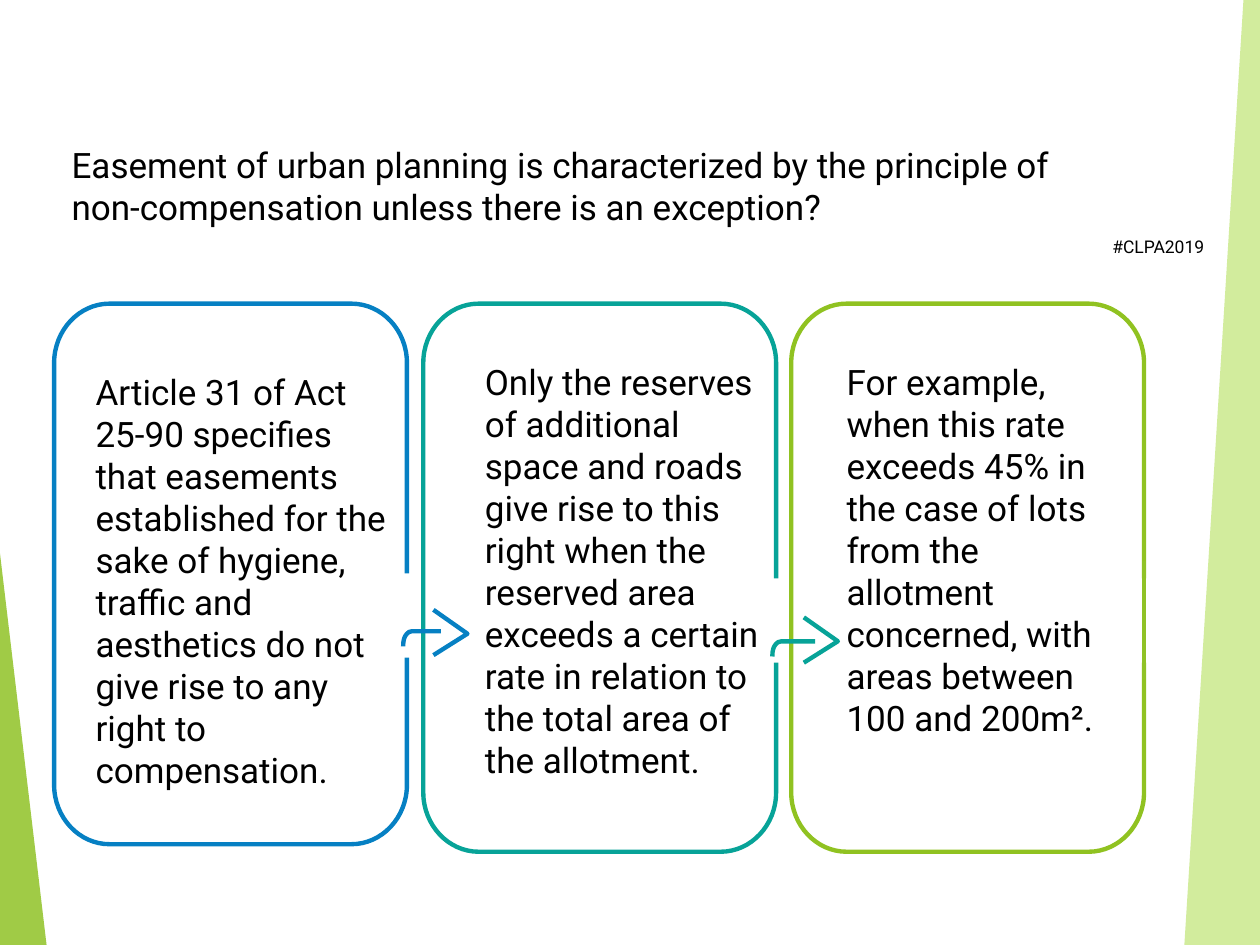
import pptx
import pptx.dml.color
import pptx.enum.shapes
import pptx.enum.text
import pptx.oxml.ns
import pptx.util
from lxml import etree
from pptx.oxml.ns import qn
from pptx.util import Inches

COLORS = {
    "text": "000000",
    "blue": "0680C3",
    "teal": "07A398",
    "green": "90C221",
    "edge": "90C226",
    "pale": "C0E474",
}
FONT = "Roboto"
CARD_TOP, CARD_WIDTH = 2.41, 2.8
CORNER_X, CORNER_Y = 0.44, 0.47
ROUNDNESS = 0.55


def rgb(name):
    return pptx.dml.color.RGBColor.from_string(COLORS[name])


def corner(start, bend, end):
    """Curve as two control points and an end point, rounding the bend."""
    controls = [tuple(p + (b - p) * ROUNDNESS for p, b in zip(point, bend))
                for point in (start, end)]
    return [*controls, end]


def write_text(frame, text, size=20, color="text", font=FONT):
    run = frame.paragraphs[0].add_run()
    run.text = text
    run.font.size = pptx.util.Pt(size)
    run.font.name = font
    run.font.color.rgb = rgb(color)


class SlideBuilder:
    def __init__(self, slide, line_width=2.5):
        self.slide = slide
        self.line_width = line_width

    def fill(self, shape, color, opacity):
        shape.shadow.inherit = False
        shape.line.fill.background()
        shape.fill.solid()
        shape.fill.fore_color.rgb = rgb(color)
        tint = shape._element.spPr.find(".//" + qn("a:srgbClr"))
        etree.SubElement(tint, qn("a:alpha"), val=str(opacity * 1000))

    def freeform(self, start, segments, close=False):
        """Draw segments of one point as lines and of three points as curves."""
        points = [(Inches(x), Inches(y)) for segment in segments for x, y in segment]
        builder = self.slide.shapes.build_freeform(Inches(start[0]), Inches(start[1]))
        builder.add_line_segments(points, close=close)
        shape = builder.convert_to_shape()
        steps = iter(list(shape._element.iter(qn("a:lnTo"))))
        for segment in segments:
            first, *others = [next(steps) for _ in segment]
            if others:
                first.addprevious(curve := etree.Element(qn("a:cubicBezTo")))
                for step in (first, *others):
                    curve.append(step[0])
                    step.getparent().remove(step)
        return shape

    def outline(self, start, segments, color):
        shape = self.freeform(start, segments)
        shape.shadow.inherit = False
        shape.fill.background()
        shape.line.color.rgb = rgb(color)
        shape.line.width = pptx.util.Pt(self.line_width)

    def polygon(self, points, color, opacity):
        start, *others = points
        shape = self.freeform(start, [[point] for point in others], close=True)
        self.fill(shape, color, opacity)

    def triangle(self, left, top, width, height, color, opacity):
        shape = self.slide.shapes.add_shape(
            pptx.enum.shapes.MSO_SHAPE.ISOSCELES_TRIANGLE,
            Inches(left), Inches(top), Inches(width), Inches(height))
        shape.adjustments[0] = 0
        self.fill(shape, color, opacity)

    def line(self, start, end, color, width):
        connector = self.slide.shapes.add_connector(
            pptx.enum.shapes.MSO_CONNECTOR.STRAIGHT,
            *[Inches(value) for value in (*start, *end)])
        connector.line.color.rgb = rgb(color)
        connector.line.width = pptx.util.Pt(width)
        etree.SubElement(connector._element.spPr, qn("a:effectLst"))

    def text(self, left, top, width, height, text, **text_format):
        box = self.slide.shapes.add_textbox(
            Inches(left), Inches(top), Inches(width), Inches(height))
        box.text_frame.word_wrap = True
        box.text_frame.vertical_anchor = pptx.enum.text.MSO_ANCHOR.TOP
        write_text(box.text_frame, text, **text_format)

    def card(self, left, bottom, gap_top, gap_bottom, color):
        """Rounded frame whose right side is open between the two gap heights."""
        right = left + CARD_WIDTH
        near, far = left + CORNER_X, right - CORNER_X
        high, low = CARD_TOP + CORNER_Y, bottom - CORNER_Y
        corners = [
            ((right, low), (right, bottom), (far, bottom)),
            ((near, bottom), (left, bottom), (left, low)),
            ((left, high), (left, CARD_TOP), (near, CARD_TOP)),
            ((far, CARD_TOP), (right, CARD_TOP), (right, high)),
        ]
        segments = []
        for start, bend, end in corners:
            segments += [[start], corner(start, bend, end)]
        self.outline((right, gap_bottom), segments + [[(right, gap_top)]], color)

    def hooked_arrow(self, edge, y, stem_end, tip, color):
        """Arrow that bends out of a card's right edge towards the next card."""
        hook = [
            [(edge + 0.04, y)],
            [(edge + 0.02, y), (edge + 0.01, y + 0.01), (edge, y + 0.02)],
            [(edge - 0.02, y + 0.04), (edge - 0.03, y + 0.07), (edge - 0.03, y + 0.12)],
        ]
        self.outline((stem_end, y), hook, color)
        tip_x, tip_y = tip
        back = tip_x - 0.27
        self.outline((back, tip_y - 0.19), [[tip], [(back, tip_y + 0.17)]], color)


def main():
    deck = pptx.Presentation()
    deck.slide_width, deck.slide_height = Inches(10), Inches(7.5)
    page = SlideBuilder(deck.slides.add_slide(deck.slide_layouts[6]))

    page.polygon([(9.87, -0.01), (10, -0.01), (10, 7.5), (9.4, 7.5)], "pale", 70)
    page.triangle(0, 4.39, 0.37, 3.11, "edge", 85)
    page.text(8.73, 1.82, 1, 0.28, "#CLPA2019", size=10)

    page.card(6.28, 6.76, 4.59, 5.26, "green")
    page.card(3.36, 6.76, 4.59, 5.26, "teal")
    page.hooked_arrow(6.16, 5.09, 6.47, (6.65, 5.09), "teal")
    page.card(0.43, 6.7, 4.55, 5.22, "blue")
    page.hooked_arrow(3.23, 5.01, 3.5, (3.71, 5.03), "blue")

    page.text(0.66, 2.89, 2.62, 3.49,
              "Article 31 of Act 25-90 specifies that easements established for the "
              "sake of hygiene, traffic and aesthetics do not give rise to any right "
              "to compensation.")
    page.text(3.75, 2.81, 2.45, 3.45,
              "Only the reserves of additional space and roads give rise to this right "
              "when the reserved area exceeds a certain rate in relation to the total "
              "area of the allotment.")
    page.text(6.62, 2.81, 2.45, 3.02,
              "For example, when this rate exceeds 45% in the case of lots from the "
              "allotment concerned, with areas between 100 and 200m².")
    page.line((9.08, 4.45), (9.08, 5.39), "edge", 2)
    page.text(0.47, 1.09, 7.97, 0.77,
              "Easement of urban planning is characterized by the principle of "
              "non-compensation unless there is an exception?")

    deck.save("out.pptx")


if __name__ == "__main__":
    main()
